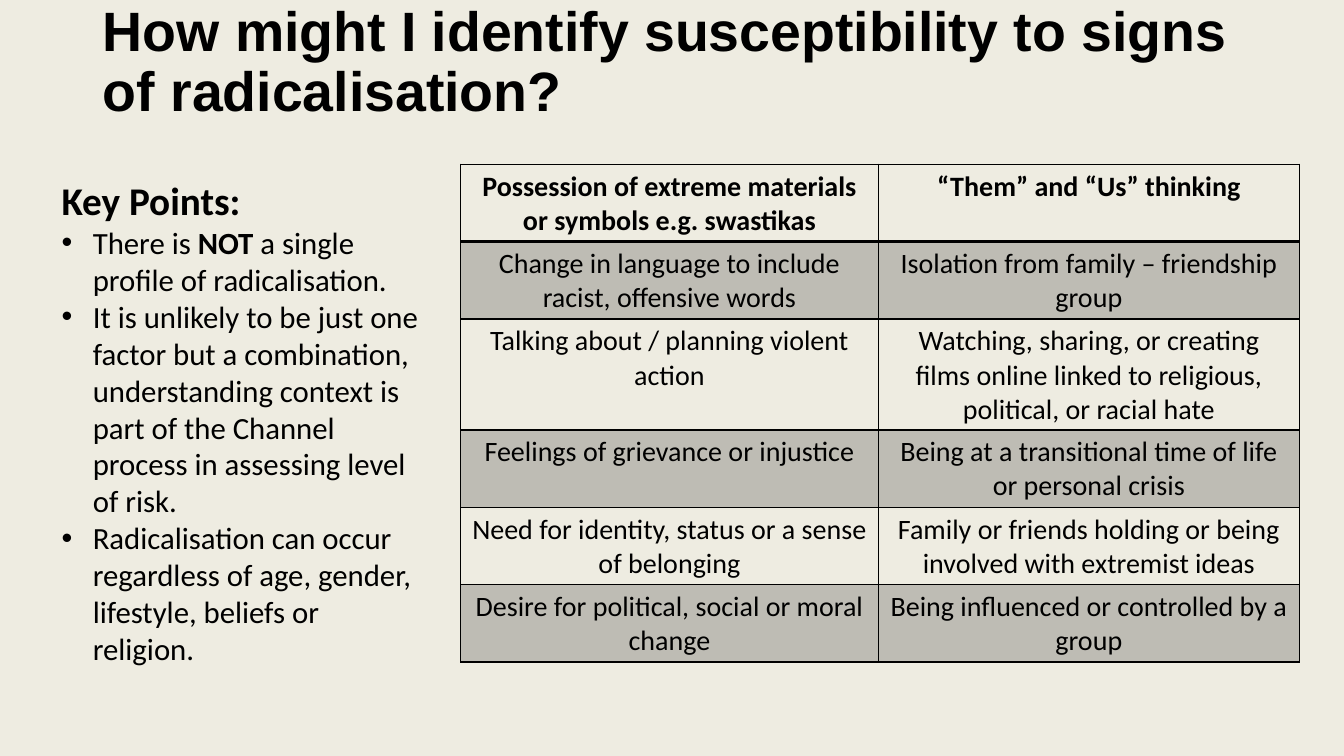
from dataclasses import dataclass

from lxml import etree
from pptx import Presentation
from pptx import util as u
from pptx.dml.color import RGBColor
from pptx.enum import text
from pptx.oxml.ns import qn

WIDTH, HEIGHT = u.Inches(13.33), u.Inches(7.5)
COLORS = {"background": "EEECE1", "ink": "000000"}
BAND_OPACITY = 20  # percent
BULLET_INDENT = u.Inches(0.31)


@dataclass(frozen=True)
class Area:
    """A place on a grid of 100 columns by 100 rows."""
    col: float
    row: float
    cols: float
    rows: float

    def box(self) -> tuple[int, int, int, int]:
        return (across(self.col), down(self.row),
                across(self.cols), down(self.rows))


@dataclass(frozen=True)
class SignRow:
    left: str
    right: str
    rows: float = 10.13


TITLE = "How might I identify susceptibility to signs of radicalisation?"
TITLE_AREA = Area(6.9, 5.33, 89.8, 14.93)
POINTS_AREA = Area(3.83, 22.67, 28.43, 66.93)
SIGN_COLS = (31.06, 31.36)
SIGNS = [
    SignRow("Possession of extreme materials or symbols e.g. swastikas",
            "“Them” and “Us” thinking"),
    SignRow("Change in language to include racist, offensive words",
            "Isolation from family – friendship group"),
    SignRow("Talking about / planning violent action",
            "Watching, sharing, or creating films online linked to religious, "
            "political, or racial hate", 14.53),
    SignRow("Feelings of grievance or injustice",
            "Being at a transitional time of life or personal crisis"),
    SignRow("Need for identity, status or a sense of belonging",
            "Family or friends holding or being involved with extremist ideas"),
    SignRow("Desire for political, social or moral change",
            "Being influenced or controlled by a group"),
]
SIGNS_AREA = Area(34.28, 21.73, sum(SIGN_COLS), sum(s.rows for s in SIGNS))

# Each point is a list of (wording, bold) parts
POINTS = [
    [("There is ", False), ("NOT ", True),
     ("a single profile of radicalisation.", False)],
    [("It is unlikely to be just one factor but a combination, understanding "
      "context is part of the Channel process in assessing level of risk.", False)],
    [("Radicalisation can occur regardless of age, gender, lifestyle, beliefs "
      "or religion.", False)],
]


def across(cols: float) -> int:
    return round(WIDTH * cols / 100)


def down(rows: float) -> int:
    return round(HEIGHT * rows / 100)


def place(sp, area: Area) -> None:
    sp.left, sp.top, sp.width, sp.height = area.box()


def add_run(p, wording: str, *, size: float, bold: bool = False,
            font: str = "Calibri") -> None:
    r = p.add_run()
    r.text = wording
    r.font.name, r.font.size, r.font.bold = font, u.Pt(size), bold
    r.font.color.rgb = RGBColor.from_string(COLORS["ink"])


def set_bullet(p, char: str = "") -> None:
    pPr = p._p.get_or_add_pPr()
    indent = BULLET_INDENT if char else 0
    pPr.set("marL", str(indent))
    pPr.set("indent", str(-indent))
    if char:
        etree.SubElement(pPr, qn("a:buFont"), typeface="Arial")
        etree.SubElement(pPr, qn("a:buChar"), char=char)
    else:
        etree.SubElement(pPr, qn("a:buNone"))
    p.space_before = u.Pt(0)


def set_border(cell, side: str, width: float) -> None:
    ln = etree.SubElement(cell._tc.get_or_add_tcPr(), qn(f"a:ln{side}"),
                          w=str(u.Pt(width)))
    fill = etree.SubElement(ln, qn("a:solidFill"))
    etree.SubElement(fill, qn("a:srgbClr"), val=COLORS["ink"])


def fill_cell(cell, banded: bool) -> None:
    if not banded:
        cell.fill.background()
        return
    cell.fill.solid()
    cell.fill.fore_color.rgb = RGBColor.from_string(COLORS["ink"])
    color = cell._tc.tcPr.find(f".//{qn('a:solidFill')}[last()]")
    color = cell._tc.tcPr.find(qn("a:solidFill")).find(qn("a:srgbClr"))
    etree.SubElement(color, qn("a:alpha"), val=str(BAND_OPACITY * 1000))


def add_title(s) -> None:
    sp = s.shapes.title
    place(sp, TITLE_AREA)
    tf = sp.text_frame
    tf.word_wrap, tf.auto_size = True, text.MSO_AUTO_SIZE.NONE
    tf.vertical_anchor = text.MSO_ANCHOR.MIDDLE
    tf.margin_bottom = u.Inches(0.7)
    p = tf.paragraphs[0]
    p.alignment, p.line_spacing = text.PP_ALIGN.LEFT, 0.9
    add_run(p, TITLE, size=39.6, bold=True, font="Arial")


def add_points(s) -> None:
    sp = s.placeholders[1]
    place(sp, POINTS_AREA)
    tf = sp.text_frame
    tf.word_wrap, tf.auto_size = True, text.MSO_AUTO_SIZE.SHAPE_TO_FIT_TEXT
    p = tf.paragraphs[0]
    set_bullet(p)
    add_run(p, "Key Points:", size=28, bold=True)
    for parts in POINTS:
        p = tf.add_paragraph()
        set_bullet(p, "•")
        for wording, bold in parts:
            add_run(p, wording, size=22, bold=bold)


def add_signs(s) -> None:
    table = s.shapes.add_table(len(SIGNS), len(SIGN_COLS),
                               *SIGNS_AREA.box()).table
    table.first_row = table.horz_banding = False
    for column, cols in zip(table.columns, SIGN_COLS):
        column.width = across(cols)
    for i, sign in enumerate(SIGNS):
        table.rows[i].height = down(sign.rows)
        for j, wording in enumerate((sign.left, sign.right)):
            cell = table.cell(i, j)
            p = cell.text_frame.paragraphs[0]
            p.alignment = text.PP_ALIGN.CENTER
            add_run(p, wording, size=20, bold=i == 0)
            # The line under the heading row is heavier
            for side in "LRTB":
                heavy = (i, side) in ((0, "B"), (1, "T"))
                set_border(cell, side, 2 if heavy else 1)
            fill_cell(cell, banded=i % 2 == 1)


def main() -> None:
    prs = Presentation()
    prs.slide_width, prs.slide_height = WIDTH, HEIGHT
    s = prs.slides.add_slide(prs.slide_layouts[1])
    s.background.fill.solid()
    s.background.fill.fore_color.rgb = RGBColor.from_string(COLORS["background"])
    add_title(s)
    add_signs(s)
    add_points(s)
    prs.save("out.pptx")


if __name__ == "__main__":
    main()
